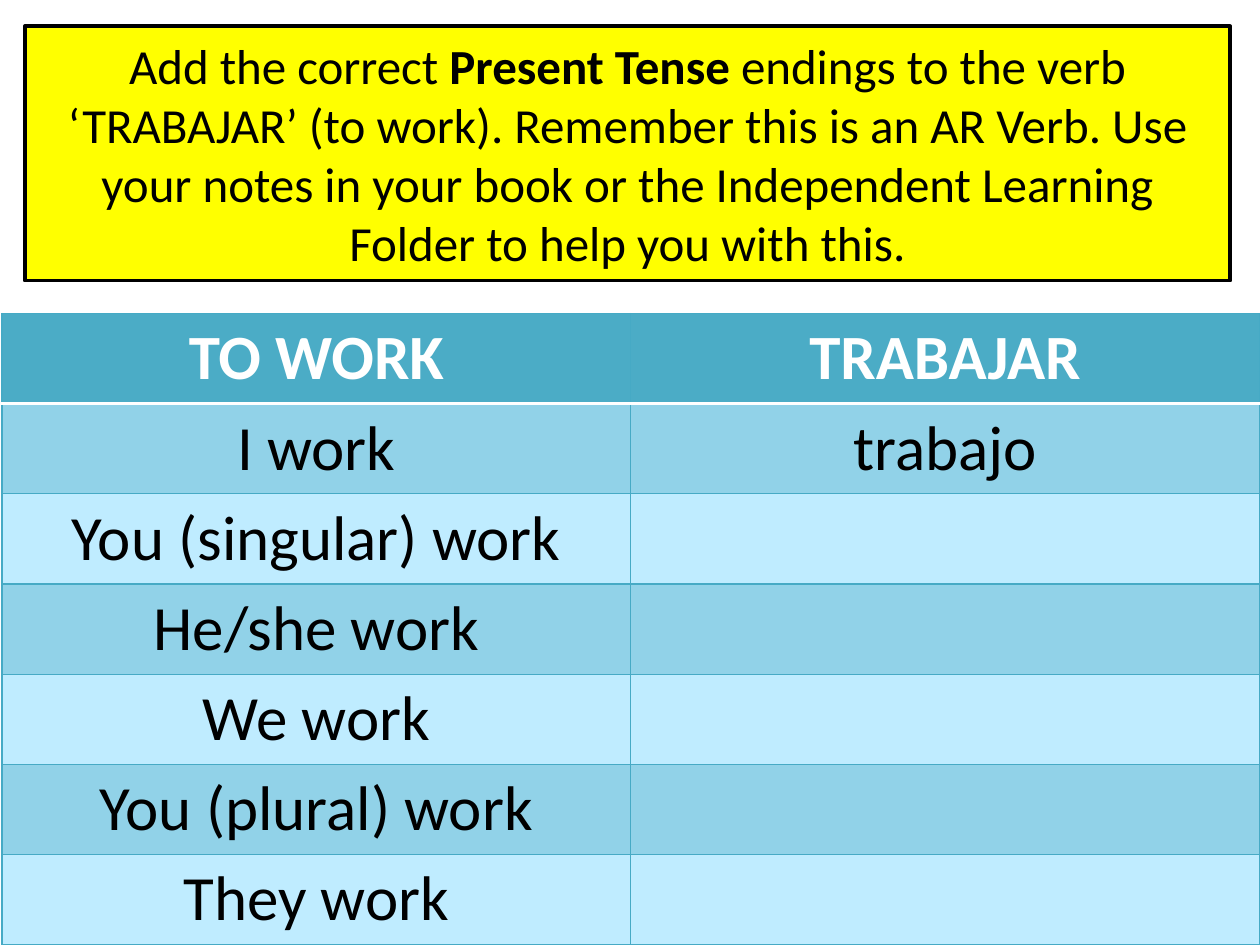
from lxml.etree import SubElement
from pptx import Presentation
from pptx.dml.color import RGBColor
from pptx.enum.shapes import MSO_SHAPE
from pptx.enum.text import MSO_ANCHOR, PP_ALIGN
from pptx.oxml.ns import qn
from pptx.util import Cm, Pt

FONT = "Calibri"
COLORS = {
    "yellow": "FFFF00",
    "black": "000000",
    "white": "FFFFFF",
    "header": "4BACC6",
    "band_dark": "91D2E8",
    "band_light": "BFECFF",
    "border": "46AAC5",
}
INSTRUCTION = [
    ("Add the correct ", False),
    ("Present Tense ", True),
    ("endings to the verb ‘TRABAJAR’ (to work). Remember this is an AR Verb. "
     "Use your notes in your book or the Independent Learning Folder "
     "to help you with this.", False),
]
CONJUGATION = [
    ("TO WORK", "TRABAJAR"),
    ("I work", "trabajo"),
    ("You (singular) work", ""),
    ("He/she work", ""),
    ("We work", ""),
    ("You (plural) work", ""),
    ("They work", ""),
]


def rgb(name):
    return RGBColor.from_string(COLORS[name])


def style_run(r, size, color, bold):
    r.font.name = FONT
    r.font.size = Pt(size)
    r.font.bold = bold
    r.font.color.rgb = rgb(color)


def set_border(cell, side, color, width):
    ln = SubElement(cell._tc.get_or_add_tcPr(), qn(f"a:ln{side}"), w=str(Pt(width)))
    fill = SubElement(ln, qn("a:solidFill"))
    SubElement(fill, qn("a:srgbClr"), val=COLORS[color])


def add_instruction(s, left, top, width, height):
    sp = s.shapes.add_shape(MSO_SHAPE.ROUNDED_RECTANGLE, left, top, width, height)
    sp.adjustments[0] = 0
    sp.shadow.inherit = False
    sp.fill.solid()
    sp.fill.fore_color.rgb = rgb("yellow")
    sp.line.color.rgb = rgb("black")
    sp.line.width = Pt(2)

    tf = sp.text_frame
    tf.word_wrap = True
    tf.vertical_anchor = MSO_ANCHOR.MIDDLE
    p = tf.paragraphs[0]
    p.alignment = PP_ALIGN.CENTER
    for text, bold in INSTRUCTION:
        r = p.add_run()
        r.text = text
        style_run(r, 28, "black", bold)


def add_conjugation_table(s, left, top, width, height):
    rows, cols = len(CONJUGATION), len(CONJUGATION[0])
    table = s.shapes.add_table(rows, cols, left, top, width, height).table
    for i, row in enumerate(CONJUGATION):
        is_header = i == 0
        fill = "header" if is_header else ("band_light", "band_dark")[i % 2]
        for j, text in enumerate(row):
            cell = table.cell(i, j)
            # Borders: a thick white rule separates header and body
            for side in "LRTB":
                if (i, side) in ((0, "B"), (1, "T")):
                    set_border(cell, side, "white", 2)
                else:
                    set_border(cell, side, "border", 0.75)
            cell.fill.solid()
            cell.fill.fore_color.rgb = rgb(fill)

            # Text; empty cells keep the size for the answers
            p = cell.text_frame.paragraphs[0]
            p.text = text
            p.alignment = PP_ALIGN.CENTER
            p.font.size = Pt(36)
            for r in p.runs:
                style_run(r, 36, "white" if is_header else "black", is_header)


def main():
    prs = Presentation()
    prs.slide_width, prs.slide_height = Cm(25.4), Cm(19.05)
    s = prs.slides.add_slide(prs.slide_layouts[6])
    add_instruction(s, Cm(0.5), Cm(0.53), Cm(24.3), Cm(5.13))
    add_conjugation_table(s, Cm(0.04), Cm(6.32), Cm(25.35), Cm(12.73))
    prs.save("out.pptx")


if __name__ == "__main__":
    main()
